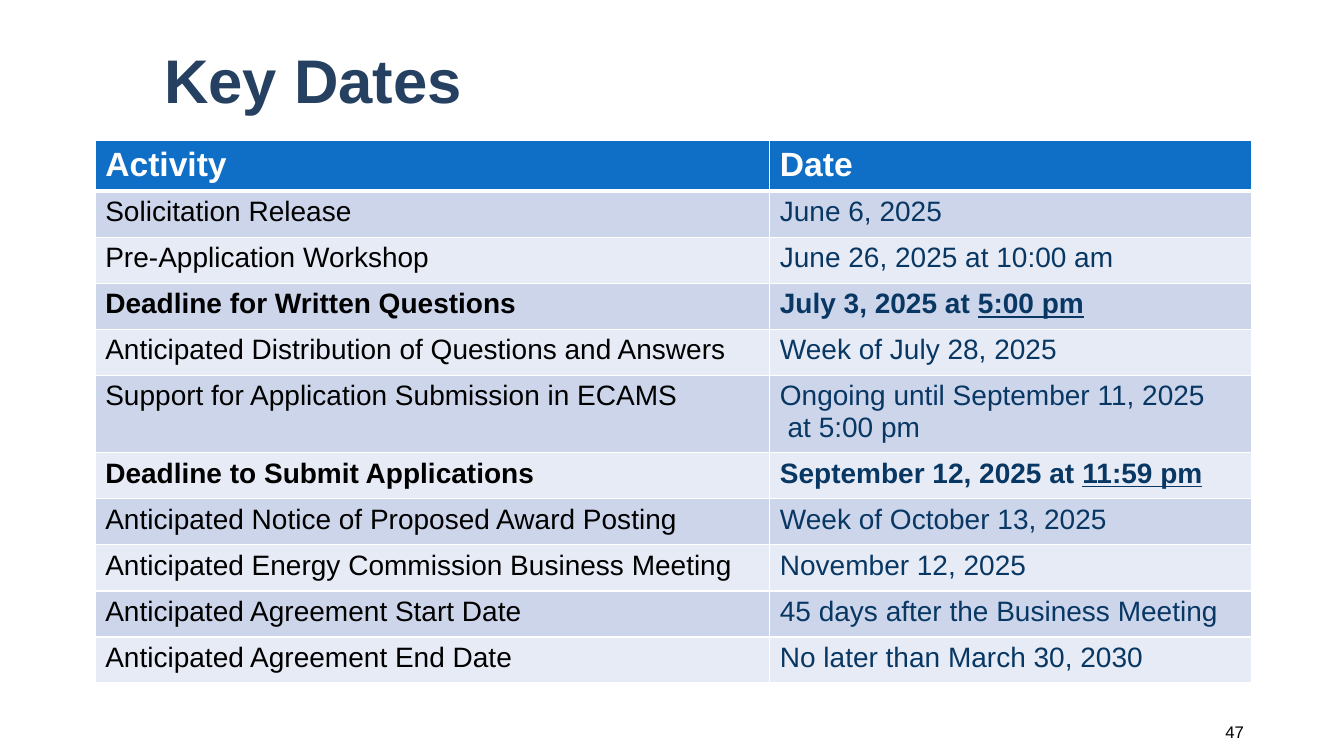
import lxml.etree
import pptx
import pptx.dml.color
import pptx.enum.text
import pptx.oxml.ns
import pptx.util

Cm = pptx.util.Cm
Pt = pptx.util.Pt
FONT = "Arial"
NAVY, BLACK, WHITE = "083763", "000000", "FFFFFF"
HEADER_FILL, BAND_FILLS = "0F6FC6", ("CCD5EA", "E7EBF5")
COLUMN_WIDTHS = (17, 12.14)
LINE_ROW, EXTRA_LINE = 1.16, 0.69

KEY_DATES = [
    ("Solicitation Release", ["June 6, 2025"], ""),
    ("Pre-Application Workshop", ["June 26, 2025 at 10:00 am"], ""),
    ("Deadline for Written Questions", ["July 3, 2025 at "], "5:00 pm"),
    ("Anticipated Distribution of Questions and Answers", ["Week of July 28, 2025"], ""),
    ("Support for Application Submission in ECAMS",
     ["Ongoing until September 11, 2025", " at 5:00 pm"], ""),
    ("Deadline to Submit Applications", ["September 12, 2025 at "], "11:59 pm"),
    ("Anticipated Notice of Proposed Award Posting", ["Week of October 13, 2025"], ""),
    ("Anticipated Energy Commission Business Meeting", ["November 12, 2025"], ""),
    ("Anticipated Agreement Start Date", ["45 days after the Business Meeting"], ""),
    ("Anticipated Agreement End Date", ["No later than March 30, 2030"], ""),
]


def color(value):
    """Turn a hex string into a colour."""
    return pptx.dml.color.RGBColor.from_string(value)


def add_span(para, text, size, ink, bold=False, underline=False):
    """Add one formatted run to a paragraph."""
    span = para.add_run()
    span.text = text
    span.font.name = FONT
    span.font.size = Pt(size)
    span.font.color.rgb = color(ink)
    span.font.bold = bold
    span.font.underline = underline


def add_label(page, box, text, size, ink, bold=False, align=None):
    """Place a vertically centred line of text in a box given in centimetres."""
    frame = page.shapes.add_textbox(*map(Cm, box)).text_frame
    frame.word_wrap = True
    frame.vertical_anchor = pptx.enum.text.MSO_ANCHOR.MIDDLE
    para = frame.paragraphs[0]
    para.alignment = align
    para.line_spacing = 0.9
    add_span(para, text, size, ink, bold)


def style_cell(cell, fill, top=1, bottom=1):
    """Give a cell white borders of the given widths and a solid fill."""
    properties = cell._tc.get_or_add_tcPr()
    for side, width in (("L", 1), ("R", 1), ("T", top), ("B", bottom)):
        line = lxml.etree.SubElement(
            properties, pptx.oxml.ns.qn("a:ln" + side), w=str(Pt(width)))
        solid = lxml.etree.SubElement(line, pptx.oxml.ns.qn("a:solidFill"))
        lxml.etree.SubElement(solid, pptx.oxml.ns.qn("a:srgbClr"), val=WHITE)
    cell.fill.solid()
    cell.fill.fore_color.rgb = color(fill)


def add_dates_table(page, left, top):
    """Build the table of activities and dates from its top left corner."""
    heights = [LINE_ROW] + [LINE_ROW + EXTRA_LINE * (len(lines) - 1)
                            for _, lines, _ in KEY_DATES]
    table = page.shapes.add_table(
        len(heights), len(COLUMN_WIDTHS), Cm(left), Cm(top),
        Cm(sum(COLUMN_WIDTHS)), Cm(sum(heights))).table
    for column, width in zip(table.columns, COLUMN_WIDTHS):
        column.width = Cm(width)
    for row, height in zip(table.rows, heights):
        row.height = Cm(height)

    for cell, heading in zip(table.rows[0].cells, ("Activity", "Date")):
        style_cell(cell, HEADER_FILL, bottom=3)
        add_span(cell.text_frame.paragraphs[0], heading, 24, WHITE, True)

    for index, (activity, lines, deadline) in enumerate(KEY_DATES):
        activity_cell, date_cell = table.rows[index + 1].cells
        for cell in (activity_cell, date_cell):
            style_cell(cell, BAND_FILLS[index % 2], top=1 if index else 3)
        bold = bool(deadline)
        add_span(activity_cell.text_frame.paragraphs[0], activity, 20, BLACK, bold)
        frame = date_cell.text_frame
        for number, line in enumerate(lines):
            para = frame.add_paragraph() if number else frame.paragraphs[0]
            add_span(para, line, 20, NAVY, bold)
        if deadline:
            add_span(para, deadline, 20, NAVY, True, True)


def main():
    """Build the key dates slide and save it."""
    deck = pptx.Presentation()
    deck.slide_width, deck.slide_height = Cm(33.87), Cm(19.05)
    page = deck.slides.add_slide(deck.slide_layouts[6])
    add_label(page, (3.89, 0.66, 27.66, 2.9), "Key Dates", 44, "254061", True)
    add_dates_table(page, 2.4, 3.55)
    add_label(page, (26.6, 17.95, 5, 1.02), "47", 12, BLACK,
              align=pptx.enum.text.PP_ALIGN.RIGHT)
    deck.save("out.pptx")


if __name__ == "__main__":
    main()
